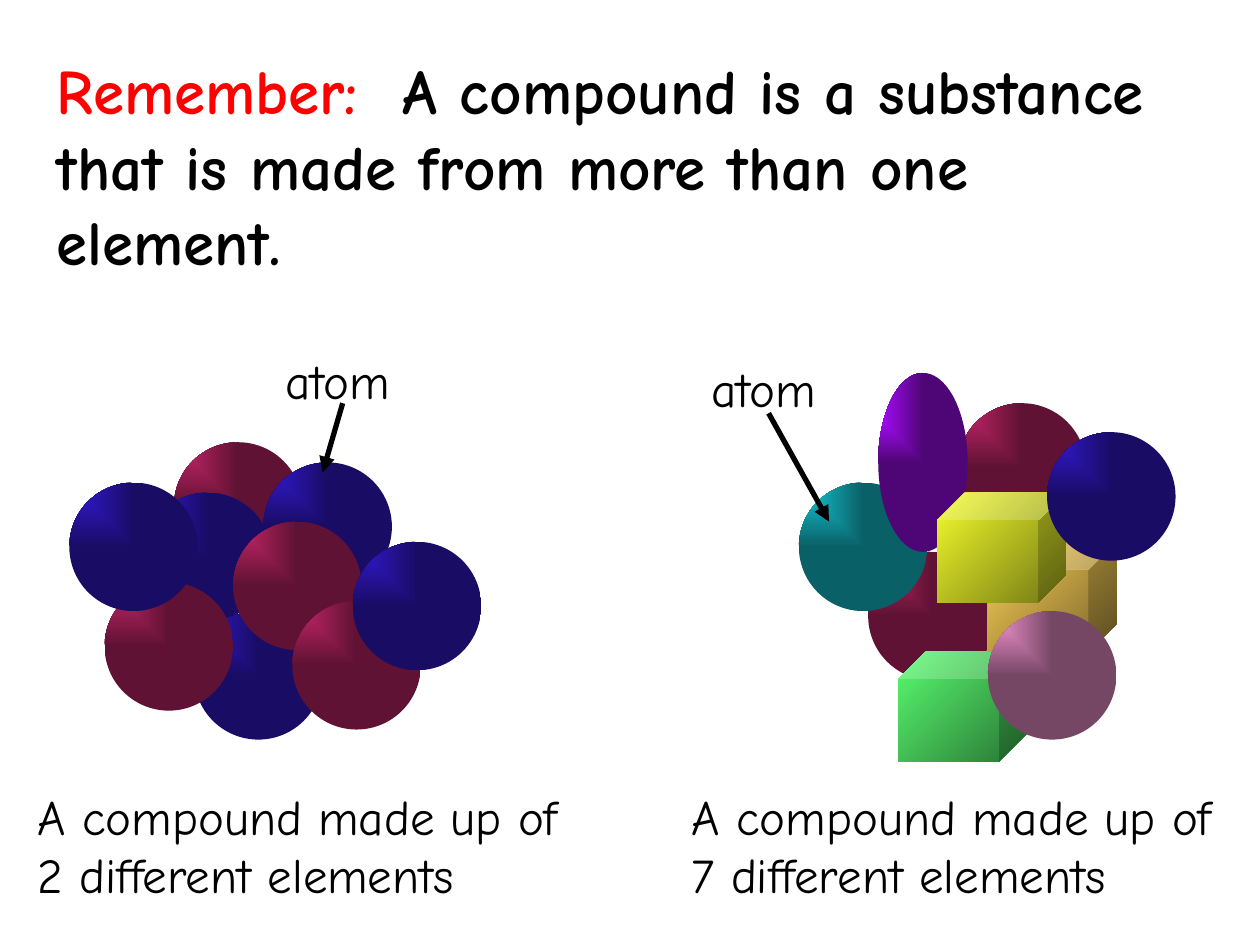
import pptx
import pptx.dml.color
import pptx.enum.shapes
import pptx.oxml
import pptx.oxml.ns
import pptx.util
from pptx.util import Inches

FONT = "Comic Neue"
COLORS = {"text": "000000", "accent": "FF0000"}
# Light and dark end of each atom's gradient
ATOMS = {
    "crimson": ("CD276E", "5F1233"),
    "navy": ("351ADA", "190C65"),
    "teal": ("16D0DE", "0A6067"),
    "violet": ("A80CFE", "4E0676"),
    "pink": ("FE9ADA", "764765"),
    "green": ("59FD70", "297534"),
    "tan": ("FDD259", "756129"),
    "yellow": ("F4FE2C", "717614"),
}
SPHERE = (1.02, 1.02)
OVAL = (0.71, 1.42)
CUBE = (1.02, 0.87)


def rgb(value):
    return pptx.dml.color.RGBColor.from_string(value)


class SlideBuilder:
    def __init__(self, slide):
        self.slide = slide

    def text(self, left, top, width, height, spans, size, bold=False):
        box = self.slide.shapes.add_textbox(
            Inches(left), Inches(top), Inches(width), Inches(height))
        box.text_frame.word_wrap = True
        para = box.text_frame.paragraphs[0]
        for content, color in spans:
            span = para.add_run()
            span.text = content
            span.font.name = FONT
            span.font.size = pptx.util.Pt(size)
            span.font.bold = bold
            span.font.color.rgb = rgb(COLORS[color])

    def gradient_shape(self, kind, left, top, size, color):
        shape = self.slide.shapes.add_shape(
            kind, Inches(left), Inches(top), *map(Inches, size))
        shape.shadow.inherit = False
        shape.line.fill.background()
        shape.fill.gradient()
        for stop, value in zip(shape.fill.gradient_stops, ATOMS[color]):
            stop.color.rgb = rgb(value)
        return shape

    def round_atom(self, left, top, color, size=SPHERE):
        shape = self.gradient_shape(
            pptx.enum.shapes.MSO_SHAPE.OVAL, left, top, size, color)
        # Rectangular gradient spreading from the top left corner
        gradient = shape.element.spPr.find(pptx.oxml.ns.qn("a:gradFill"))
        linear = gradient.find(pptx.oxml.ns.qn("a:lin"))
        gradient.replace(linear, pptx.oxml.parse_xml(
            f'<a:path {pptx.oxml.ns.nsdecls("a")} path="rect">'
            '<a:fillToRect r="100000" b="100000"/></a:path>'))

    def cube_atom(self, left, top, color):
        shape = self.gradient_shape(
            pptx.enum.shapes.MSO_SHAPE.CUBE, left, top, CUBE, color)
        shape.adjustments[0] = 0.25
        shape.fill.gradient_angle = 315

    def arrow(self, start, end):
        line = self.slide.shapes.add_connector(
            pptx.enum.shapes.MSO_CONNECTOR.STRAIGHT,
            *map(Inches, start + end))
        line.line.color.rgb = rgb(COLORS["text"])
        line.line.width = pptx.util.Pt(3)
        namespace = pptx.oxml.ns.nsdecls("a")
        line.line._get_or_add_ln().append(pptx.oxml.parse_xml(
            f'<a:tailEnd {namespace} type="triangle"/>'))
        line.element.spPr.append(
            pptx.oxml.parse_xml(f"<a:effectLst {namespace}/>"))


def main():
    deck = pptx.Presentation()
    deck.slide_width, deck.slide_height = Inches(10), Inches(7.5)
    page = SlideBuilder(deck.slides.add_slide(deck.slide_layouts[6]))

    # Definition
    page.text(0.35, 0.36, 9.21, 1.65, [
        ("Remember:", "accent"),
        ("  A compound is a substance that is made from more than one "
         "element.", "text"),
    ], 36, bold=True)

    # Compound of seven elements, back to front
    page.round_atom(6.89, 4.38, "crimson")
    page.cube_atom(7.13, 5.17, "green")
    page.cube_atom(7.84, 4.3, "tan")
    page.round_atom(7.84, 4.85, "pink")
    page.round_atom(6.34, 3.83, "teal")
    page.round_atom(7.6, 3.2, "crimson")
    page.round_atom(6.97, 2.96, "violet", OVAL)
    page.cube_atom(7.44, 3.91, "yellow")
    page.round_atom(8.31, 3.43, "navy")

    # Compound of two elements, back to front
    for left, top, color in [
        (1.38, 3.51, "crimson"),
        (2.09, 3.67, "navy"),
        (1.14, 3.91, "navy"),
        (1.54, 4.85, "navy"),
        (1.85, 4.14, "crimson"),
        (2.32, 4.77, "crimson"),
        (0.83, 4.62, "crimson"),
        (0.55, 3.83, "navy"),
        (2.8, 4.3, "navy"),
    ]:
        page.round_atom(left, top, color)

    # Atom labels with arrows
    for left, top, start, end in [
        (2.17, 2.73, (2.72, 3.2), (2.56, 3.75)),
        (5.55, 2.8, (6.1, 3.28), (6.58, 4.14)),
    ]:
        page.text(left, top, 1.26, 0.57, [("atom", "text")], 28)
        page.arrow(start, end)

    # Captions
    for left, width, count in [(0.2, 4.57, 2), (5.39, 4.61, 7)]:
        caption = f"A compound made up of {count} different elements"
        page.text(left, 6.19, width, 1.03, [(caption, "text")], 28)

    deck.save("out.pptx")


if __name__ == "__main__":
    main()
